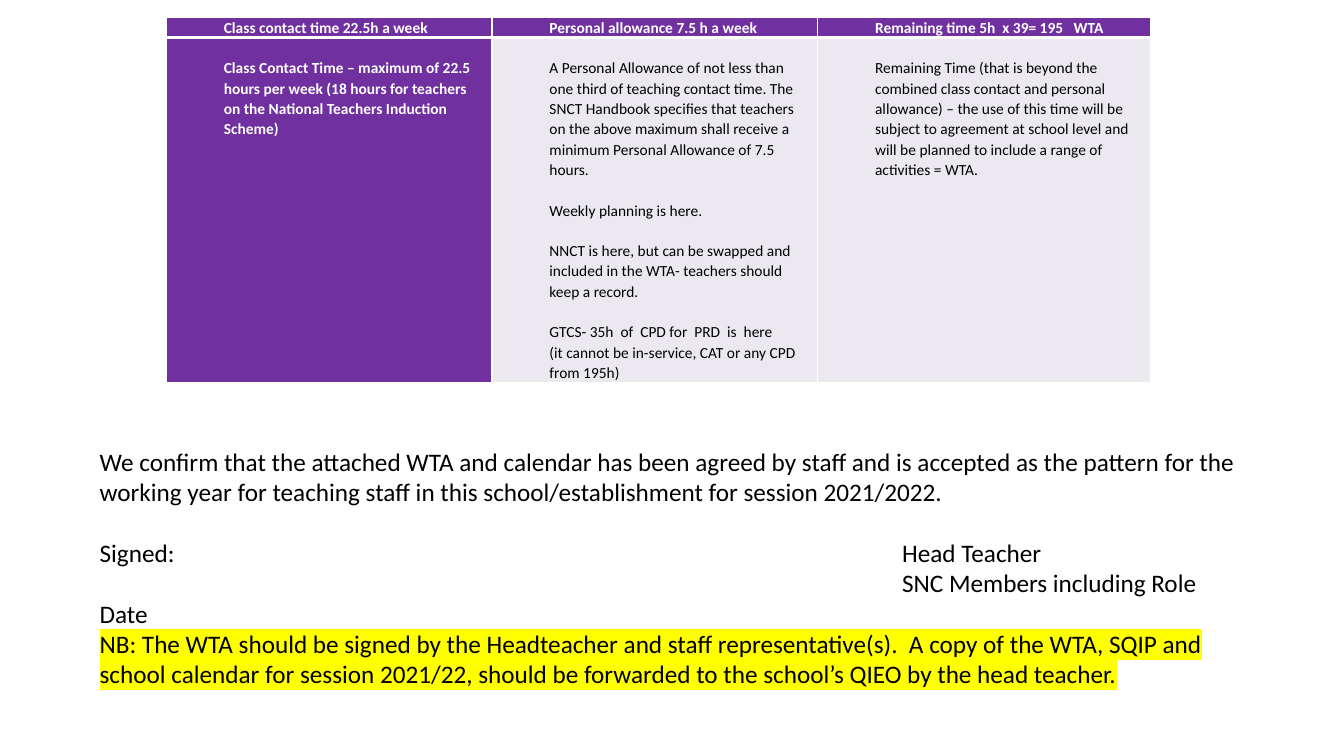
"""Build the working time agreement slide with its hours table and sign-off text."""
from dataclasses import dataclass

from lxml import etree
from pptx import Presentation
from pptx import util as u
from pptx.dml.color import RGBColor
from pptx.enum import text as t
from pptx.oxml import ns

PURPLE = RGBColor(0x70, 0x30, 0xA0)
LILAC = RGBColor(0xEB, 0xE8, 0xF0)
WHITE = RGBColor(0xFF, 0xFF, 0xFF)
BLACK = RGBColor(0, 0, 0)
YELLOW = RGBColor(0xFF, 0xFF, 0)
FONT = "Calibri"
TABLE_LINE = 14.5
HEADER_HEIGHT, BODY_HEIGHT = 0.2, 3.42
SIGNATURE_TAB = 7.96


@dataclass(frozen=True)
class Line:
    text: str
    gap: float = 0
    tab: float | None = None
    highlight: RGBColor | None = None


@dataclass(frozen=True)
class Column:
    heading: str
    width: float
    fill: RGBColor
    color: RGBColor
    bold: bool
    lines: tuple[Line, ...]


COLUMNS = (
    Column("Class contact time 22.5h a week", 3.23, PURPLE, WHITE, True, (
        Line("Class Contact Time – maximum of 22.5 hours per week (18 hours for "
             "teachers on the National Teachers Induction Scheme)"),
    )),
    Column("Personal allowance 7.5 h a week", 3.23, LILAC, BLACK, False, (
        Line("A Personal Allowance of not less than one third of teaching contact "
             "time. The SNCT Handbook specifies that teachers on the above maximum "
             "shall receive a minimum Personal Allowance of 7.5 hours."),
        Line("Weekly planning is here.", gap=TABLE_LINE),
        Line("NNCT is here, but can be swapped and included in the WTA- teachers "
             "should keep a record.", gap=TABLE_LINE),
        Line("GTCS- 35h  of  CPD for  PRD  is  here", gap=TABLE_LINE),
        Line("(it cannot be in-service, CAT or any CPD from 195h)"),
    )),
    Column("Remaining time 5h  x 39= 195   WTA", 3.3, LILAC, BLACK, False, (
        Line("Remaining Time (that is beyond the combined class contact and personal "
             "allowance) – the use of this time will be subject to agreement at "
             "school level and will be planned to include a range of activities = WTA."),
    )),
)

SIGN_OFF = (
    Line("We confirm that the attached WTA and calendar has been agreed by staff and "
         "is accepted as the pattern for the working year for teaching staff in this "
         "school/establishment for session 2021/2022."),
    Line("Signed:\tHead Teacher", gap=21.7, tab=SIGNATURE_TAB),
    Line("\tSNC Members including Role", tab=SIGNATURE_TAB),
    Line("Date"),
    Line("NB: The WTA should be signed by the Headteacher and staff "
         "representative(s).  A copy of the WTA, SQIP and school calendar for session "
         "2021/22, should be forwarded to the school’s QIEO by the head teacher.",
         highlight=YELLOW),
)


def write(frame, lines: tuple[Line, ...], *, size: float, color: RGBColor,
          bold: bool = False, spacing: float = 1.0) -> None:
    """Fill a text frame with formatted paragraphs."""
    for index, line in enumerate(lines):
        para = frame.add_paragraph() if index else frame.paragraphs[0]
        if line.tab is not None:
            tabs = etree.SubElement(para._p.get_or_add_pPr(), ns.qn("a:tabLst"))
            etree.SubElement(tabs, ns.qn("a:tab"), pos=str(u.Inches(line.tab)), algn="l")
        para.line_spacing = spacing
        if line.gap:
            para.space_before = u.Pt(line.gap)
        span = para.add_run()
        span.text = line.text
        font = span.font
        font.name, font.size, font.bold = FONT, u.Pt(size), bold
        font.color.rgb = color
        if line.highlight is not None:
            mark = etree.Element(ns.qn("a:highlight"))
            etree.SubElement(mark, ns.qn("a:srgbClr"), val=str(line.highlight))
            span._r.rPr.find(ns.qn("a:solidFill")).addnext(mark)


def style_cell(cell, fill: RGBColor, top_margin: float, borders: dict[str, float]) -> None:
    """Set the margins, white borders and fill of a table cell."""
    cell.margin_left, cell.margin_right = u.Inches(0.57), u.Inches(0.07)
    cell.margin_top, cell.margin_bottom = u.Inches(top_margin), 0
    properties = cell._tc.get_or_add_tcPr()
    for side in ("L", "R", "T", "B"):
        edge = etree.SubElement(properties, ns.qn(f"a:ln{side}"),
                                w=str(u.Pt(borders.get(side, 1))))
        paint = etree.SubElement(edge, ns.qn("a:solidFill"))
        etree.SubElement(paint, ns.qn("a:srgbClr"), val=str(WHITE))
    cell.fill.solid()
    cell.fill.fore_color.rgb = fill


def add_hours_table(page) -> None:
    """Draw the table that splits the working week."""
    table = page.shapes.add_table(
        2, len(COLUMNS), u.Inches(1.65), u.Inches(0.17),
        u.Inches(sum(column.width for column in COLUMNS)),
        u.Inches(HEADER_HEIGHT + BODY_HEIGHT)).table
    table.horz_banding = False
    table.rows[0].height = u.Inches(HEADER_HEIGHT)
    table.rows[1].height = u.Inches(BODY_HEIGHT)
    for index, column in enumerate(COLUMNS):
        table.columns[index].width = u.Inches(column.width)
        header, body = table.cell(0, index), table.cell(1, index)
        style_cell(header, PURPLE, 0, {"B": 3})
        write(header.text_frame, (Line(column.heading),), size=11, color=WHITE,
              bold=True, spacing=1.07)
        style_cell(body, column.fill, 0.2, {"T": 3})
        write(body.text_frame, column.lines, size=11, color=column.color,
              bold=column.bold, spacing=1.07)


def add_sign_off(page) -> None:
    """Draw the confirmation and signature text."""
    box = page.shapes.add_textbox(u.Inches(0.89), u.Inches(4.38),
                                  u.Inches(11.83), u.Inches(2.52))
    box.text_frame.word_wrap = True
    box.text_frame.auto_size = t.MSO_AUTO_SIZE.SHAPE_TO_FIT_TEXT
    write(box.text_frame, SIGN_OFF, size=18, color=BLACK)


def main() -> None:
    """Create the deck and save it."""
    deck = Presentation()
    deck.slide_width, deck.slide_height = u.Inches(13.33), u.Inches(7.5)
    page = deck.slides.add_slide(deck.slide_layouts[6])
    add_hours_table(page)
    add_sign_off(page)
    deck.save("out.pptx")


if __name__ == "__main__":
    main()
